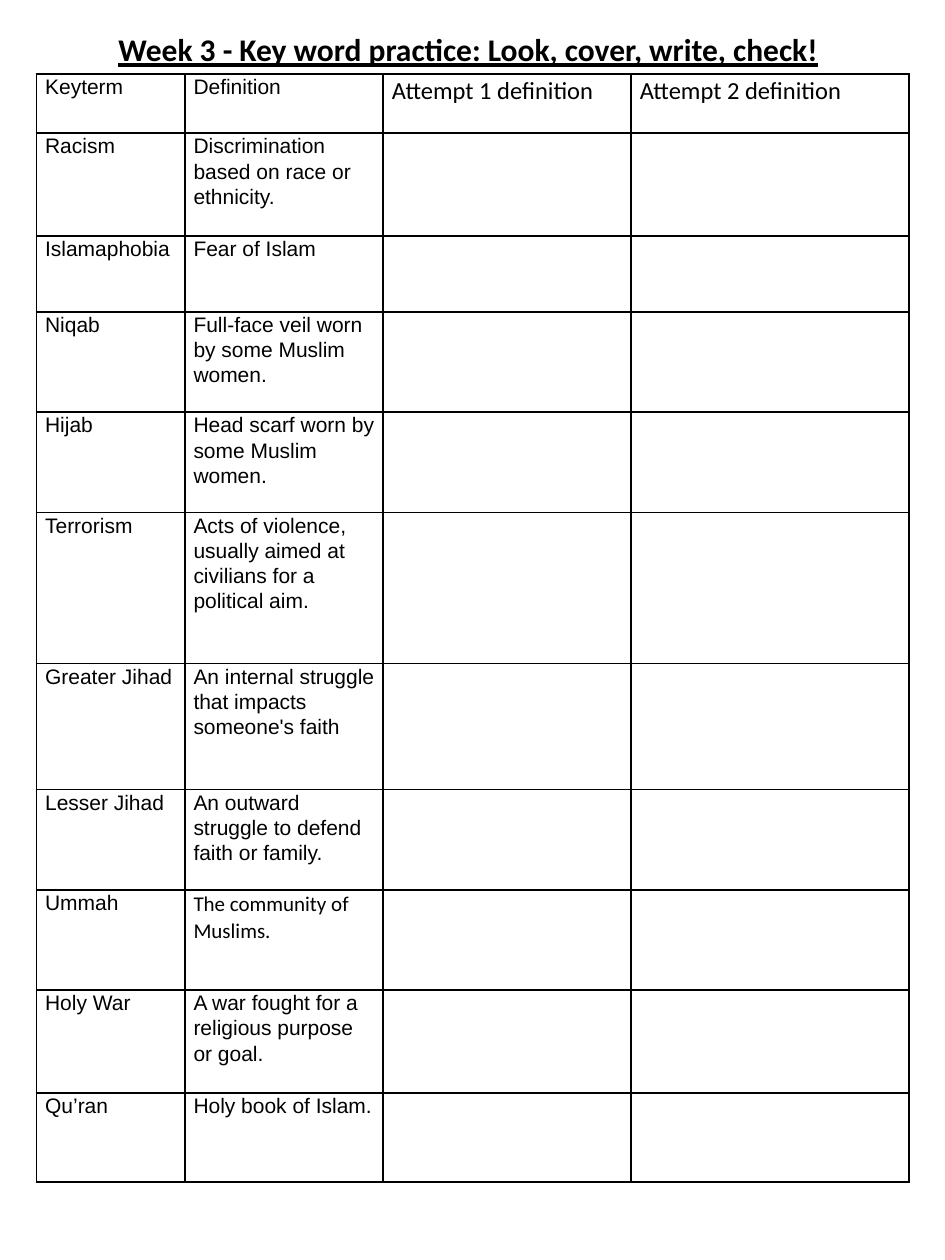
from dataclasses import dataclass

from lxml.etree import SubElement
from pptx import Presentation
from pptx.dml.color import RGBColor
from pptx.enum.text import MSO_ANCHOR, MSO_AUTO_SIZE, PP_ALIGN
from pptx.oxml.ns import qn
from pptx.util import Pt


@dataclass(frozen=True)
class Theme:
    ink: str = "000000"
    body_font: str = "Arial"
    alt_font: str = "Calibri"
    title_size: float = 18
    attempt_size: float = 14
    body_size: float = 12
    border: float = 1


THEME = Theme()
TITLE = "Week 3 - Key word practice: Look, cover, write, check!"
HEADERS = ["Keyterm", "Definition", "Attempt 1 definition", "Attempt 2 definition"]
COL_WIDTHS = [84.8, 113.4, 141.7, 158.8]
HEADER_HEIGHT = 33.7
# Key term, definition, row height
TERMS = [
    ("Racism", "Discrimination based on race or ethnicity.", 58.9),
    ("Islamaphobia", "Fear of Islam", 43.2),
    ("Niqab", "Full-face veil worn by some Muslim women.", 57.4),
    ("Hijab", "Head scarf worn by some Muslim women.", 57.4),
    ("Terrorism", "Acts of violence, usually aimed at civilians for a political aim.", 86.3),
    ("Greater Jihad", "An internal struggle that impacts someone's faith", 72),
    ("Lesser Jihad", "An outward struggle to defend faith or family.", 57.3),
    ("Ummah", "The community of Muslims.", 57.3),
    ("Holy War", "A war fought for a religious purpose or goal.", 58.7),
    ("Qu’ran", "Holy book of Islam.", 51),
]
ALT_FONT_TERM = "Ummah"


def write(tf, text, size=THEME.body_size, font=THEME.body_font,
          bold=False, underline=False, spacing=1.0):
    p = tf.paragraphs[0]
    p.alignment = PP_ALIGN.LEFT
    p.line_spacing = spacing
    r = p.add_run()
    r.text = text
    r.font.size = Pt(size)
    r.font.name = font
    r.font.bold = bold
    r.font.underline = underline
    r.font.color.rgb = RGBColor.from_string(THEME.ink)


def add_title(slide, text):
    sp = slide.shapes.title
    sp.left, sp.top, sp.width, sp.height = Pt(60.5), Pt(13.7), Pt(420), Pt(29)
    tf = sp.text_frame
    tf.word_wrap = True
    tf.auto_size = MSO_AUTO_SIZE.SHAPE_TO_FIT_TEXT
    tf.vertical_anchor = MSO_ANCHOR.TOP
    write(tf, text, size=THEME.title_size, font=THEME.alt_font,
          bold=True, underline=True)


def style_cell(cell):
    """Give the cell four borders, no fill and narrow margins."""
    tc_pr = cell._tc.get_or_add_tcPr()
    for side in ("lnL", "lnR", "lnT", "lnB"):
        ln = SubElement(tc_pr, qn(f"a:{side}"), w=str(Pt(THEME.border)))
        fill = SubElement(ln, qn("a:solidFill"))
        SubElement(fill, qn("a:srgbClr"), val=THEME.ink)
    cell.fill.background()
    cell.margin_left = cell.margin_right = Pt(5)
    cell.margin_top = cell.margin_bottom = 0


def add_term_table(slide):
    heights = [HEADER_HEIGHT] + [height for _, _, height in TERMS]
    table = slide.shapes.add_table(
        len(heights), len(COL_WIDTHS), Pt(20.8), Pt(42.4),
        Pt(sum(COL_WIDTHS)), Pt(sum(heights))).table
    table.first_row = table.horz_banding = False
    for column, width in zip(table.columns, COL_WIDTHS):
        column.width = Pt(width)
    for row, height in zip(table.rows, heights):
        row.height = Pt(height)
    for cell in table.iter_cells():
        style_cell(cell)

    for col, text in enumerate(HEADERS):
        is_attempt = col >= 2
        write(table.cell(0, col).text_frame, text, spacing=1.07,
              size=THEME.attempt_size if is_attempt else THEME.body_size,
              font=THEME.alt_font if is_attempt else THEME.body_font)
    for row, (term, definition, _) in enumerate(TERMS, start=1):
        font = THEME.alt_font if term == ALT_FONT_TERM else THEME.body_font
        write(table.cell(row, 0).text_frame, term, spacing=1.07)
        write(table.cell(row, 1).text_frame, definition, font=font, spacing=1.07)


def main():
    prs = Presentation()
    prs.slide_width, prs.slide_height = Pt(540), Pt(720)
    slide = prs.slides.add_slide(prs.slide_layouts.get_by_name("Title Only"))
    add_title(slide, TITLE)
    add_term_table(slide)
    prs.save("out.pptx")


if __name__ == "__main__":
    main()
